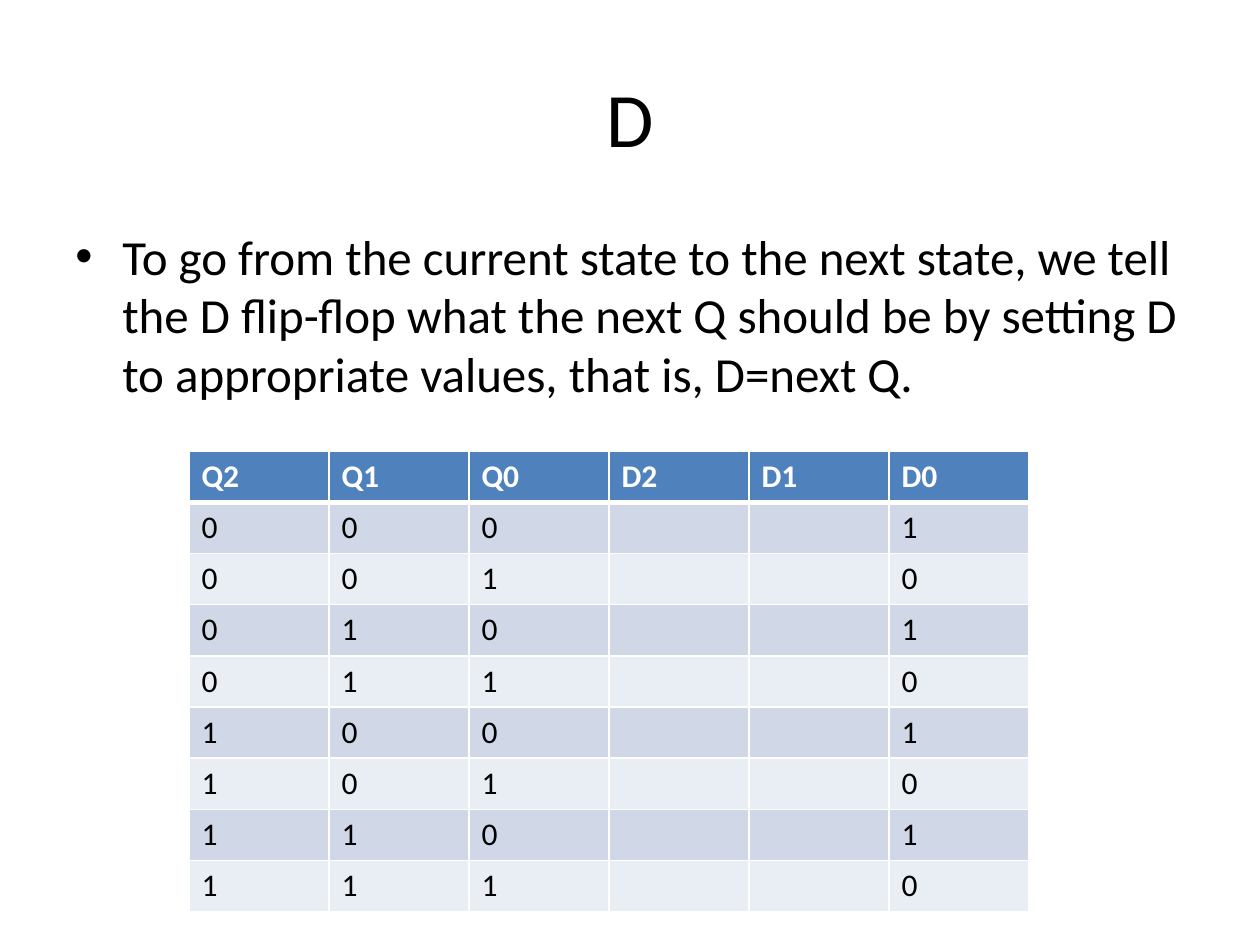
from dataclasses import dataclass

from lxml.etree import SubElement
from pptx import Presentation
from pptx.dml.color import RGBColor
from pptx.enum.text import MSO_ANCHOR, PP_ALIGN
from pptx.oxml import parse_xml
from pptx.oxml.ns import nsdecls, qn
from pptx.util import Emu, Pt

# Content
TITLE = "D"
EXPLANATION = (
    "To go from the current state to the next state, we tell the D flip-flop "
    "what the next Q should be by setting D to appropriate values, "
    "that is, D=next Q."
)
TRUTH_TABLE = [
    ("Q2", "Q1", "Q0", "D2", "D1", "D0"),
    ("0", "0", "0", "", "", "1"),
    ("0", "0", "1", "", "", "0"),
    ("0", "1", "0", "", "", "1"),
    ("0", "1", "1", "", "", "0"),
    ("1", "0", "0", "", "", "1"),
    ("1", "0", "1", "", "", "0"),
    ("1", "1", "0", "", "", "1"),
    ("1", "1", "1", "", "", "0"),
]

# Places in px: left, top, width, height
PAGE_SIZE = (1260, 945)
TITLE_BOX = (63, 38, 1134, 157)
BODY_BOX = (63, 220, 1134, 199)
TABLE_BOX = (189, 451, 840, 461)
BULLET_INDENT = 47


@dataclass(frozen=True)
class Theme:
    font: str = "Calibri"
    text: str = "000000"
    header_text: str = "FFFFFF"
    header_fill: str = "4F81BD"
    band_fills: tuple = ("D0D8E8", "E9EDF4")
    border: str = "FFFFFF"
    thin: float = 1
    thick: float = 3
    title_size: int = 44
    body_size: int = 28
    cell_size: int = 18


THEME = Theme()


def px(length):
    return Emu(length * 914400 // 126)


def style_paragraph(para, size, color, bold=False):
    para.font.name = THEME.font
    para.font.size = Pt(size)
    para.font.bold = bold
    para.font.color.rgb = RGBColor.from_string(color)


def add_text(page, place, text, size):
    box = page.shapes.add_textbox(*map(px, place))
    box.text_frame.word_wrap = True
    para = box.text_frame.paragraphs[0]
    para.text = text
    style_paragraph(para, size, THEME.text)
    return box.text_frame


def add_bullet(para):
    properties = para._p.get_or_add_pPr()
    properties.set("marL", str(px(BULLET_INDENT)))
    properties.set("indent", str(-px(BULLET_INDENT)))
    parts = (
        f'<a:spcBef {nsdecls("a")}><a:spcPct val="20000"/></a:spcBef>',
        f'<a:buFont {nsdecls("a")} typeface="Arial"/>',
        f'<a:buChar {nsdecls("a")} char="•"/>',
    )
    for position, xml in enumerate(parts):
        properties.insert(position, parse_xml(xml))


def set_borders(cell, top, bottom):
    widths = {"a:lnL": THEME.thin, "a:lnR": THEME.thin, "a:lnT": top, "a:lnB": bottom}
    properties = cell._tc.get_or_add_tcPr()
    for tag, width in widths.items():
        line = SubElement(properties, qn(tag), w=str(Pt(width)))
        fill = SubElement(line, qn("a:solidFill"))
        SubElement(fill, qn("a:srgbClr"), val=THEME.border)


def add_truth_table(page):
    frame = page.shapes.add_table(len(TRUTH_TABLE), len(TRUTH_TABLE[0]), *map(px, TABLE_BOX))
    for row, values in enumerate(TRUTH_TABLE):
        header = row == 0
        fill = THEME.header_fill if header else THEME.band_fills[(row - 1) % 2]
        color = THEME.header_text if header else THEME.text
        top = THEME.thick if row == 1 else THEME.thin
        bottom = THEME.thick if header else THEME.thin
        for column, value in enumerate(values):
            cell = frame.table.cell(row, column)
            set_borders(cell, top, bottom)
            cell.fill.solid()
            cell.fill.fore_color.rgb = RGBColor.from_string(fill)
            para = cell.text_frame.paragraphs[0]
            if value:
                para.text = value
            style_paragraph(para, THEME.cell_size, color, header)


def main():
    deck = Presentation()
    deck.slide_width, deck.slide_height = map(px, PAGE_SIZE)
    page = deck.slides.add_slide(deck.slide_layouts[6])

    # Title
    title = add_text(page, TITLE_BOX, TITLE, THEME.title_size)
    title.vertical_anchor = MSO_ANCHOR.MIDDLE
    title.paragraphs[0].alignment = PP_ALIGN.CENTER

    # Explanation
    body = add_text(page, BODY_BOX, EXPLANATION, THEME.body_size)
    add_bullet(body.paragraphs[0])

    # Truth table
    add_truth_table(page)

    deck.save("out.pptx")


if __name__ == "__main__":
    main()
